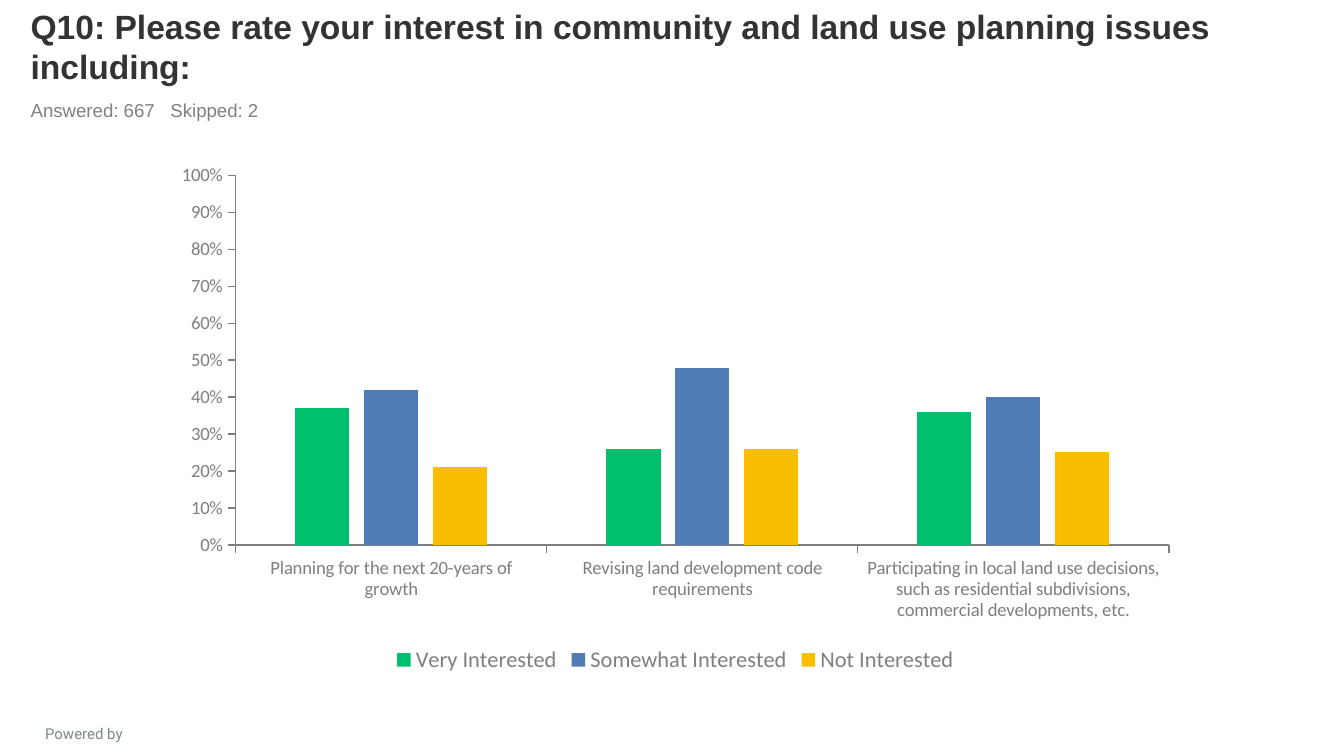
"""Build the survey slide on interest in community and land use planning."""
from lxml import etree
from pptx import Presentation
from pptx import util as u
from pptx.chart import data
from pptx.dml.color import RGBColor
from pptx.enum import chart as charts, text
from pptx.oxml import ns

WHITE = RGBColor(0xFF, 0xFF, 0xFF)
DARK = RGBColor(0x33, 0x33, 0x33)
GRAY = RGBColor(0x80, 0x80, 0x80)
AXIS_GRAY = RGBColor(0x7F, 0x7F, 0x7F)
SLATE = RGBColor(0x7C, 0x87, 0x8E)
GREEN = RGBColor(0x00, 0xBF, 0x6F)
BLUE = RGBColor(0x50, 0x7C, 0xB6)
YELLOW = RGBColor(0xF9, 0xBE, 0x00)

presentation = Presentation()
presentation.slide_width = u.Inches(10)
presentation.slide_height = u.Inches(10 * 9 / 16)
slide = presentation.slides.add_slide(presentation.slide_layouts[6])
slide.background.fill.solid()
slide.background.fill.fore_color.rgb = WHITE


def add_text(content, box, size, color, font="Arial", bold=False,
             align=text.PP_ALIGN.LEFT, anchor=text.MSO_ANCHOR.TOP, tab=None):
    shape = slide.shapes.add_textbox(*[u.Inches(length) for length in box])
    frame = shape.text_frame
    frame.word_wrap = True
    frame.vertical_anchor = anchor
    paragraph = frame.paragraphs[0]
    if tab:
        properties = paragraph._p.get_or_add_pPr()
        tabs = etree.SubElement(properties, ns.qn("a:tabLst"))
        etree.SubElement(tabs, ns.qn("a:tab"), pos=str(u.Inches(tab)), algn="l")
    paragraph.alignment = align
    run = paragraph.add_run()
    run.text = content
    run.font.name = font
    run.font.size = u.Pt(size)
    run.font.bold = bold
    run.font.color.rgb = color


add_text("Powered by", (0.05, 5.34, 1.15, 0.18), 8, SLATE, font="Roboto",
         align=text.PP_ALIGN.CENTER)
add_text("Q10: Please rate your interest in community and land use planning issues including:",
         (0.13, 0.09, 9, 0.6), 18, DARK, bold=True, anchor=text.MSO_ANCHOR.BOTTOM)
add_text("Answered: 667\tSkipped: 2", (0.13, 0.69, 9, 0.26), 10, GRAY, tab=1.04)

series_rows = [
    ("Very Interested", (0.37, 0.26, 0.36), GREEN),
    ("Somewhat Interested", (0.42, 0.48, 0.4), BLUE),
    ("Not Interested", (0.21, 0.26, 0.25), YELLOW),
]
chart_data = data.CategoryChartData(number_format="0%")
chart_data.categories = [
    "Planning for the next 20-years of growth",
    "Revising land development code requirements",
    "Participating in local land use decisions, such as residential subdivisions, "
    "commercial developments, etc.",
]
for name, values, color in series_rows:
    chart_data.add_series(name, values)

chart = slide.shapes.add_chart(
    charts.XL_CHART_TYPE.COLUMN_CLUSTERED, u.Inches(1.2), u.Inches(1.15),
    u.Inches(7.65), u.Inches(3.9), chart_data).chart
chart.has_title = False
chart.font.name = "Calibri"
chart.font.size = u.Pt(18)
chart.font.color.rgb = DARK

plot = chart.plots[0]
plot.gap_width = 219
plot.overlap = -27
plot.vary_by_categories = False
for series, (name, values, color) in zip(plot.series, series_rows):
    series.format.fill.solid()
    series.format.fill.fore_color.rgb = color
    series.invert_if_negative = False

for axis in (chart.category_axis, chart.value_axis):
    axis.has_major_gridlines = False
    axis.major_tick_mark = charts.XL_TICK_MARK.OUTSIDE
    axis.minor_tick_mark = charts.XL_TICK_MARK.NONE
    axis.format.line.color.rgb = AXIS_GRAY
    axis.format.line.width = u.Pt(0.75)
    axis.tick_labels.font.name = "Calibri"
    axis.tick_labels.font.size = u.Pt(10)
    axis.tick_labels.font.color.rgb = AXIS_GRAY
chart.category_axis.tick_label_position = charts.XL_TICK_LABEL_POSITION.LOW
chart.value_axis.minimum_scale = 0
chart.value_axis.maximum_scale = 1
chart.value_axis.major_unit = 0.1
chart.value_axis.tick_labels.number_format = "0%"
chart.value_axis.tick_labels.number_format_is_linked = False

chart.has_legend = True
chart.legend.position = charts.XL_LEGEND_POSITION.BOTTOM
chart.legend.include_in_layout = False
chart.legend.font.name = "Calibri"
chart.legend.font.size = u.Pt(12)
chart.legend.font.color.rgb = AXIS_GRAY

presentation.save("out.pptx")
